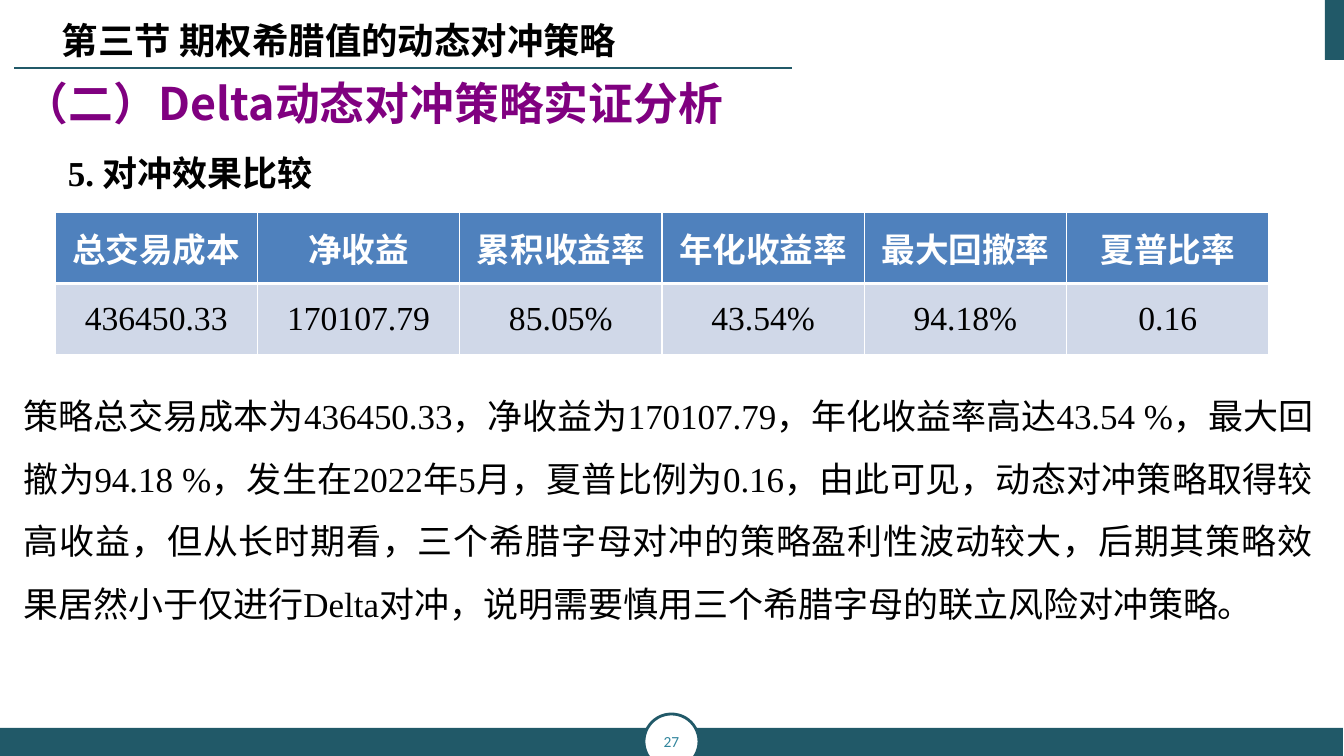
from lxml import etree
from pptx import Presentation
from pptx.dml.color import RGBColor
from pptx.enum.shapes import MSO_CONNECTOR, MSO_SHAPE
from pptx.enum.text import MSO_ANCHOR, PP_ALIGN
from pptx.oxml.ns import qn
from pptx.util import Emu, Pt

RECT, OVAL = MSO_SHAPE.RECTANGLE, MSO_SHAPE.OVAL
CENTER, LEFT, JUSTIFY = PP_ALIGN.CENTER, PP_ALIGN.LEFT, PP_ALIGN.JUSTIFY
MIDDLE = MSO_ANCHOR.MIDDLE

SECTION = "第三节 期权希腊值的动态对冲策略"
HEADING = "（二）Delta动态对冲策略实证分析"
SUBHEADING = "5. 对冲效果比较"
BODY = (
    "策略总交易成本为436450.33，净收益为170107.79，年化收益率高达43.54 %，"
    "最大回撤为94.18 %，发生在2022年5月，夏普比例为0.16，由此可见，"
    "动态对冲策略取得较高收益，但从长时期看，三个希腊字母对冲的策略盈利性波动较大，"
    "后期其策略效果居然小于仅进行Delta对冲，说明需要慎用三个希腊字母的联立风险对冲策略。"
)
RESULTS = [
    ["总交易成本", "净收益", "累积收益率", "年化收益率", "最大回撤率", "夏普比率"],
    ["436450.33", "170107.79", "85.05%", "43.54%", "94.18%", "0.16"],
]
PAGE = "27"

THEME = {
    "teal": "215968", "page": "31859C", "purple": "800080", "black": "000000",
    "white": "FFFFFF", "header": "4F81BD", "row": "D0D8E8",
    "sans": "Noto Sans CJK SC", "serif": "Times New Roman", "number": "Calibri",
    "heading_pt": 32, "section_pt": 26, "body_pt": 25, "table_pt": 24, "page_pt": 11,
    "leading_pt": 44.8,
}
WIDTH, HEIGHT = 1344, 756


def px(n):
    return Emu(round(n * 914400 / 100.8))


def color(name):
    return RGBColor.from_string(THEME[name])


def style(p, size, font, ink, bold=False, align=LEFT):
    p.alignment = align
    for r in p.runs:
        r.font.size, r.font.bold = Pt(THEME[size]), bold
        r.font.name = THEME[font]
        r.font.color.rgb = color(ink)
        ea = etree.SubElement(r.font._element, qn("a:ea"))
        ea.set("typeface", THEME["sans"])


def add_block(s, kind, x, y, w, h, fill):
    sp = s.shapes.add_shape(kind, px(x), px(y), px(w), px(h))
    sp.shadow.inherit = False
    sp.fill.solid()
    sp.fill.fore_color.rgb = color(fill)
    sp.line.fill.background()
    return sp


def add_frame(s, x, y, w, h):
    tf = s.shapes.add_textbox(px(x), px(y), px(w), px(h)).text_frame
    tf.word_wrap = True
    return tf


def add_borders(cell, bottom):
    """Put white borders before the cell's fill, as the schema requires."""
    props = cell._tc.get_or_add_tcPr()
    widths = {"a:lnL": 1, "a:lnR": 1, "a:lnT": 1, "a:lnB": bottom}
    for i, (tag, width) in enumerate(widths.items()):
        ln = etree.Element(qn(tag), w=str(Pt(width)))
        fill = etree.SubElement(ln, qn("a:solidFill"))
        etree.SubElement(fill, qn("a:srgbClr"), val=THEME["white"])
        props.insert(i, ln)


def add_decor(s):
    add_block(s, RECT, 1325, 0, 20, 60, "teal")
    add_block(s, RECT, 0, 728, 1343, 28, "teal")
    badge = add_block(s, OVAL, 644, 714, 55, 55, "white")
    badge.line.color.rgb = color("teal")
    badge.line.width = Pt(2)
    tf = badge.text_frame
    tf.margin_left = tf.margin_right = tf.margin_top = tf.margin_bottom = 0
    tf.vertical_anchor = MIDDLE
    tf.text = PAGE
    style(tf.paragraphs[0], "page_pt", "number", "page", align=CENTER)
    rule = s.shapes.add_connector(MSO_CONNECTOR.STRAIGHT, px(792), px(68), px(14), px(68))
    rule.line.color.rgb = color("teal")
    rule.line.width = Pt(1.5)
    etree.SubElement(rule._element.spPr, qn("a:effectLst"))


def add_content(s):
    tf = add_frame(s, 14, 77, 1309, 582)
    tf.text = "\n".join([HEADING, SUBHEADING, BODY])
    heading, sub, body = tf.paragraphs
    style(heading, "heading_pt", "sans", "purple", bold=True)
    heading.line_spacing = 0.9
    sub._p.get_or_add_pPr().set("marL", str(px(44)))
    style(sub, "body_pt", "serif", "black", bold=True)
    style(body, "body_pt", "serif", "black", align=JUSTIFY)
    sub.line_spacing = body.line_spacing = Pt(THEME["leading_pt"])
    body.space_before = Pt(129)


def add_results(s):
    rows, cols = len(RESULTS), len(RESULTS[0])
    table = s.shapes.add_table(rows, cols, px(55), px(212), px(1214), px(143)).table
    for i, values in enumerate(RESULTS):
        header = i == 0
        for j, value in enumerate(values):
            cell = table.cell(i, j)
            cell.text = value
            cell.vertical_anchor = MIDDLE
            cell.margin_left = cell.margin_right = px(7)
            cell.margin_top = cell.margin_bottom = 0
            cell.fill.solid()
            cell.fill.fore_color.rgb = color("header" if header else "row")
            add_borders(cell, 3 if header else 1)
            style(cell.text_frame.paragraphs[0], "table_pt", "serif",
                  "white" if header else "black", header, CENTER)


def main():
    prs = Presentation()
    prs.slide_width, prs.slide_height = px(WIDTH), px(HEIGHT)
    s = prs.slides.add_slide(prs.slide_layouts[6])
    add_decor(s)
    add_content(s)
    tf = add_frame(s, 52, 13, 617, 54)
    tf.text = SECTION
    style(tf.paragraphs[0], "section_pt", "sans", "black", bold=True)
    add_results(s)
    prs.save("out.pptx")


if __name__ == "__main__":
    main()
